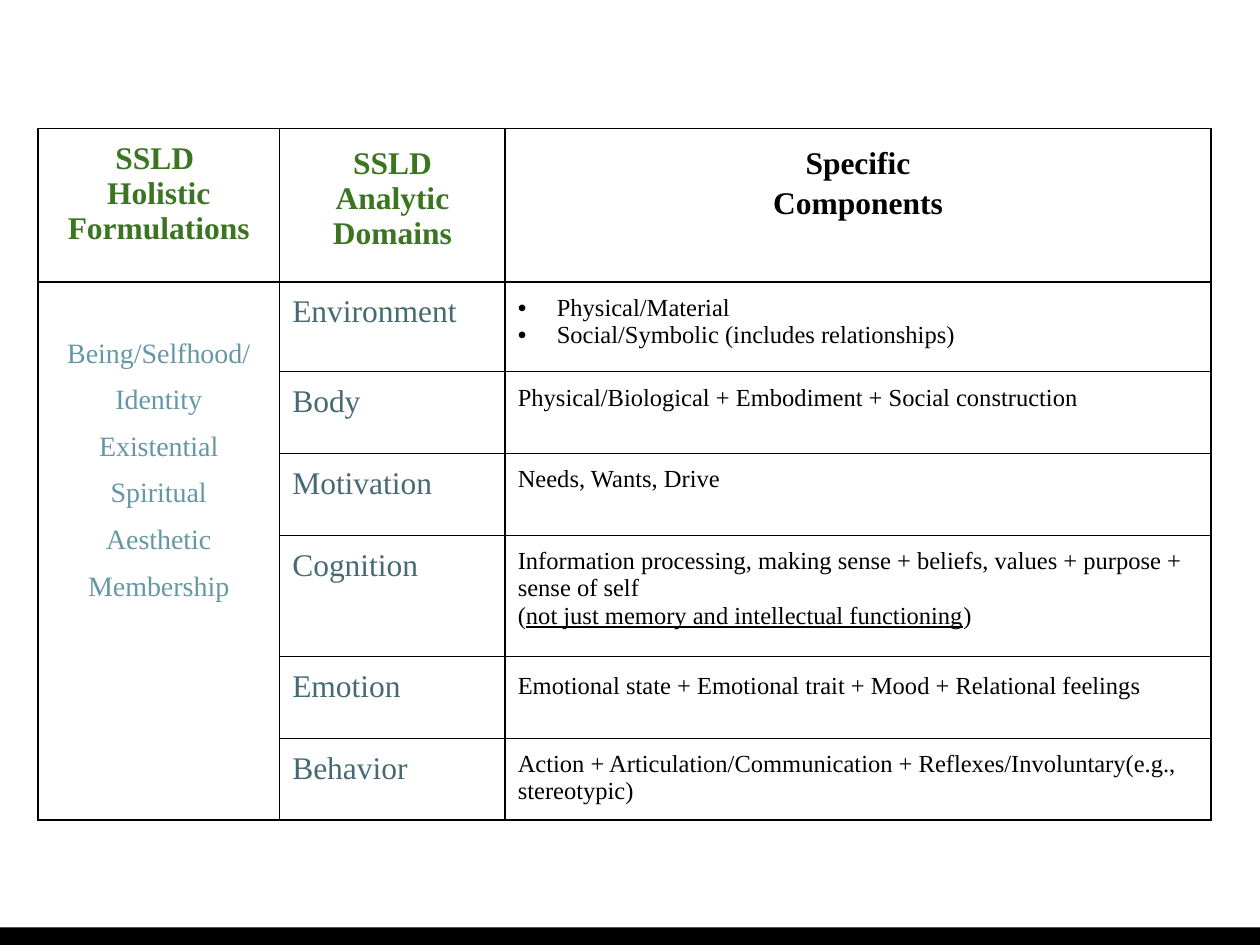
"""Build the slide with the table of SSLD formulations, domains and components."""

import lxml.etree
import pptx
import pptx.dml.color
import pptx.enum.shapes
import pptx.enum.text
import pptx.oxml.ns
import pptx.util

Inches = pptx.util.Inches
CENTER = pptx.enum.text.PP_ALIGN.CENTER
LEFT = pptx.enum.text.PP_ALIGN.LEFT
FONT = "Times New Roman"
BLACK, GREEN, TEAL, SLATE = "000000", "3C7522", "6598A4", "466973"
COLUMN_WIDTHS = (1.92, 1.79, 5.6)
ROW_HEIGHTS = (1.22, 0.71, 0.65, 0.65, 0.96, 0.65, 0.65)
MARGIN = 0.1

HEADERS = (
    (("SSLD ", "Holistic Formulations"), GREEN, (1, 1)),
    (("SSLD", "Analytic Domains"), GREEN, (1.15, 1)),
    (("Specific", "Components"), BLACK, (1.15, 1.15)),
)
FORMULATIONS = ("Being/Selfhood/Identity", "Existential", "Spiritual", "Aesthetic", "Membership")
DOMAINS = (
    ("Environment", ("Physical/Material", "Social/Symbolic (includes relationships)"),
     {"bulleted": True}),
    ("Body", ("Physical/Biological + Embodiment + Social construction",), {}),
    ("Motivation", ("Needs, Wants, Drive",), {}),
    ("Cognition",
     ("Information processing, making sense + beliefs, values + purpose + sense of self",
      ("(", "not just memory and intellectual functioning", ")")), {}),
    ("Emotion", ("Emotional state + Emotional trait + Mood + Relational feelings",),
     {"spacings": (1.15,)}),
    ("Behavior",
     ("Action + Articulation/Communication + Reflexes/Involuntary(e.g., stereotypic)",), {}),
)


def rgb(value):
    """Return the colour for a hex string."""
    return pptx.dml.color.RGBColor.from_string(value)


def add_node(parent, tag, **attributes):
    """Append a drawing element with its attributes and return it."""
    return lxml.etree.SubElement(parent, pptx.oxml.ns.qn(tag), attributes)


def add_bullet(paragraph):
    """Give a paragraph a black round bullet with a hanging indent."""
    properties = paragraph._p.get_or_add_pPr()
    indent = Inches(0.31)
    properties.set("marL", str(indent))
    properties.set("indent", str(-indent))
    add_node(add_node(properties, "a:buClr"), "a:srgbClr", val=BLACK)
    add_node(properties, "a:buFont", typeface="Arial")
    add_node(properties, "a:buChar", char="•")


def write(cell, paragraphs, *, size, color=BLACK, bold=False, align=LEFT,
          spacings=None, bulleted=False):
    """Write paragraphs in a cell; every second run of a tuple is underlined."""
    frame = cell.text_frame
    for index, content in enumerate(paragraphs):
        paragraph = frame.add_paragraph() if index else frame.paragraphs[0]
        paragraph.alignment = align
        if spacings:
            paragraph.line_spacing = float(spacings[index])
        if bulleted:
            add_bullet(paragraph)
        runs = (content,) if isinstance(content, str) else content
        for position, text in enumerate(runs):
            run = paragraph.add_run()
            run.text = text
            run.font.name = FONT
            run.font.size = pptx.util.Pt(size)
            run.font.bold = bold
            run.font.underline = position % 2 == 1
            run.font.color.rgb = rgb(color)


def format_cell(cell):
    """Set the margins, black borders and clear fill of a cell."""
    cell.margin_left = cell.margin_right = Inches(MARGIN)
    cell.margin_top = cell.margin_bottom = Inches(MARGIN)
    properties = cell._tc.get_or_add_tcPr()
    for side in ("a:lnL", "a:lnR", "a:lnT", "a:lnB"):
        border = add_node(properties, side, w=str(pptx.util.Pt(1)))
        add_node(add_node(border, "a:solidFill"), "a:srgbClr", val=BLACK)
    cell.fill.background()


def add_grid(slide):
    """Add the empty bordered table with its merged first column."""
    grid = slide.shapes.add_table(
        len(ROW_HEIGHTS), len(COLUMN_WIDTHS), Inches(0.3), Inches(1.02),
        Inches(sum(COLUMN_WIDTHS)), Inches(sum(ROW_HEIGHTS))).table
    grid.first_row = grid.horz_banding = False
    for column, width in zip(grid.columns, COLUMN_WIDTHS):
        column.width = Inches(width)
    for row, height in zip(grid.rows, ROW_HEIGHTS):
        row.height = Inches(height)
    for cell in grid.iter_cells():
        format_cell(cell)
    grid.cell(1, 0).merge(grid.cell(len(ROW_HEIGHTS) - 1, 0))
    return grid


def add_footer_bar(slide):
    """Add the black bar along the bottom edge."""
    bar = slide.shapes.add_shape(
        pptx.enum.shapes.MSO_SHAPE.RECTANGLE, 0, Inches(7.36), Inches(10), Inches(0.14))
    bar.shadow.inherit = False
    bar.fill.solid()
    bar.fill.fore_color.rgb = rgb(BLACK)
    bar.line.fill.background()


def main():
    """Build and save the slide."""
    deck = pptx.Presentation()
    deck.slide_width, deck.slide_height = Inches(10), Inches(7.5)
    slide = deck.slides.add_slide(deck.slide_layouts[6])
    add_footer_bar(slide)
    grid = add_grid(slide)
    for column, (lines, color, spacings) in enumerate(HEADERS):
        write(grid.cell(0, column), lines, size=18, color=color, bold=True,
              align=CENTER, spacings=spacings)
    holistic = grid.cell(1, 0)
    holistic.margin_top = Inches(0.32)
    write(holistic, FORMULATIONS, size=16, color=TEAL, align=CENTER,
          spacings=(1.5,) * len(FORMULATIONS))
    for row, (domain, components, layout) in enumerate(DOMAINS, start=1):
        write(grid.cell(row, 1), (domain,), size=18, color=SLATE)
        write(grid.cell(row, 2), components, size=14, **layout)
    deck.save("out.pptx")


if __name__ == "__main__":
    main()
